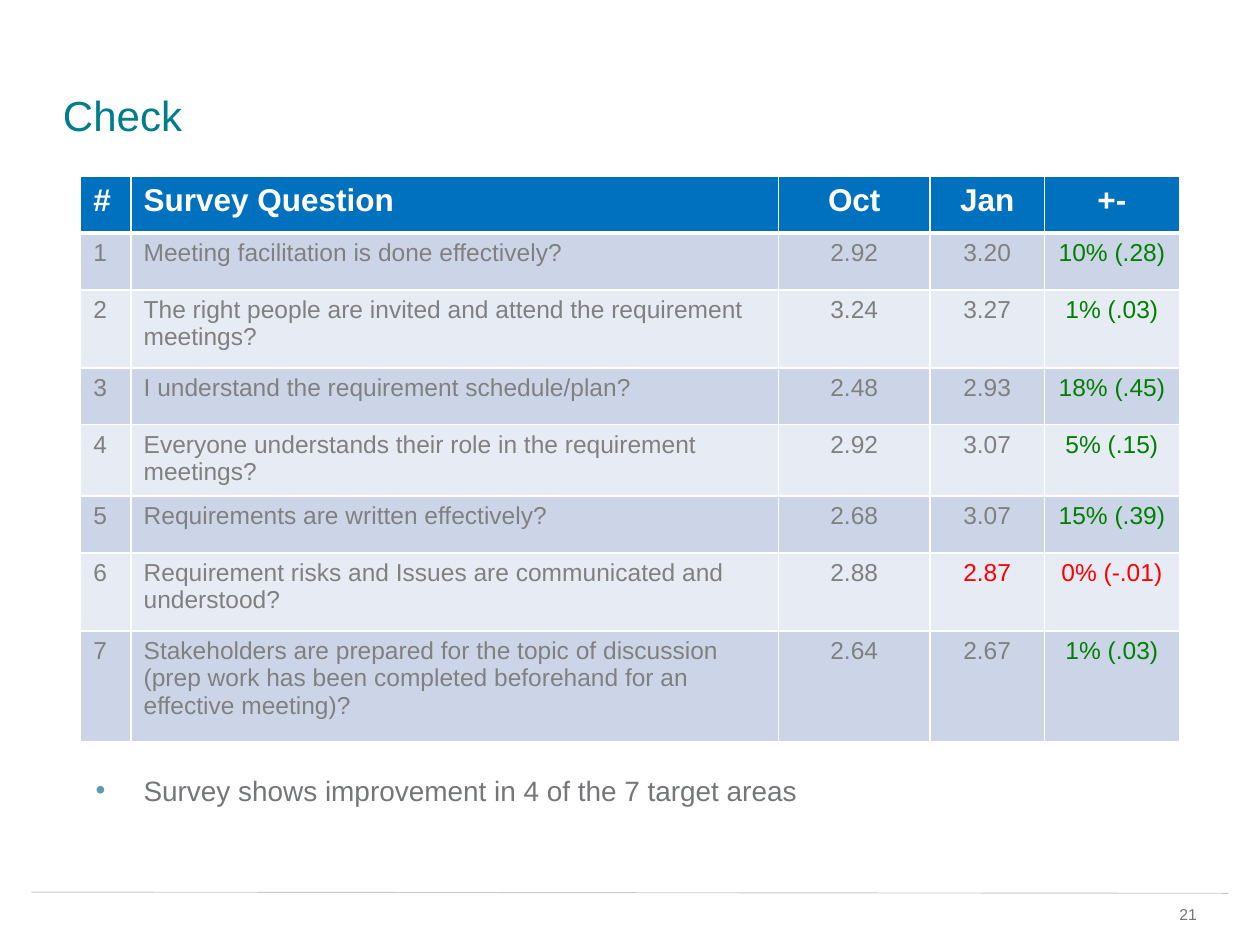
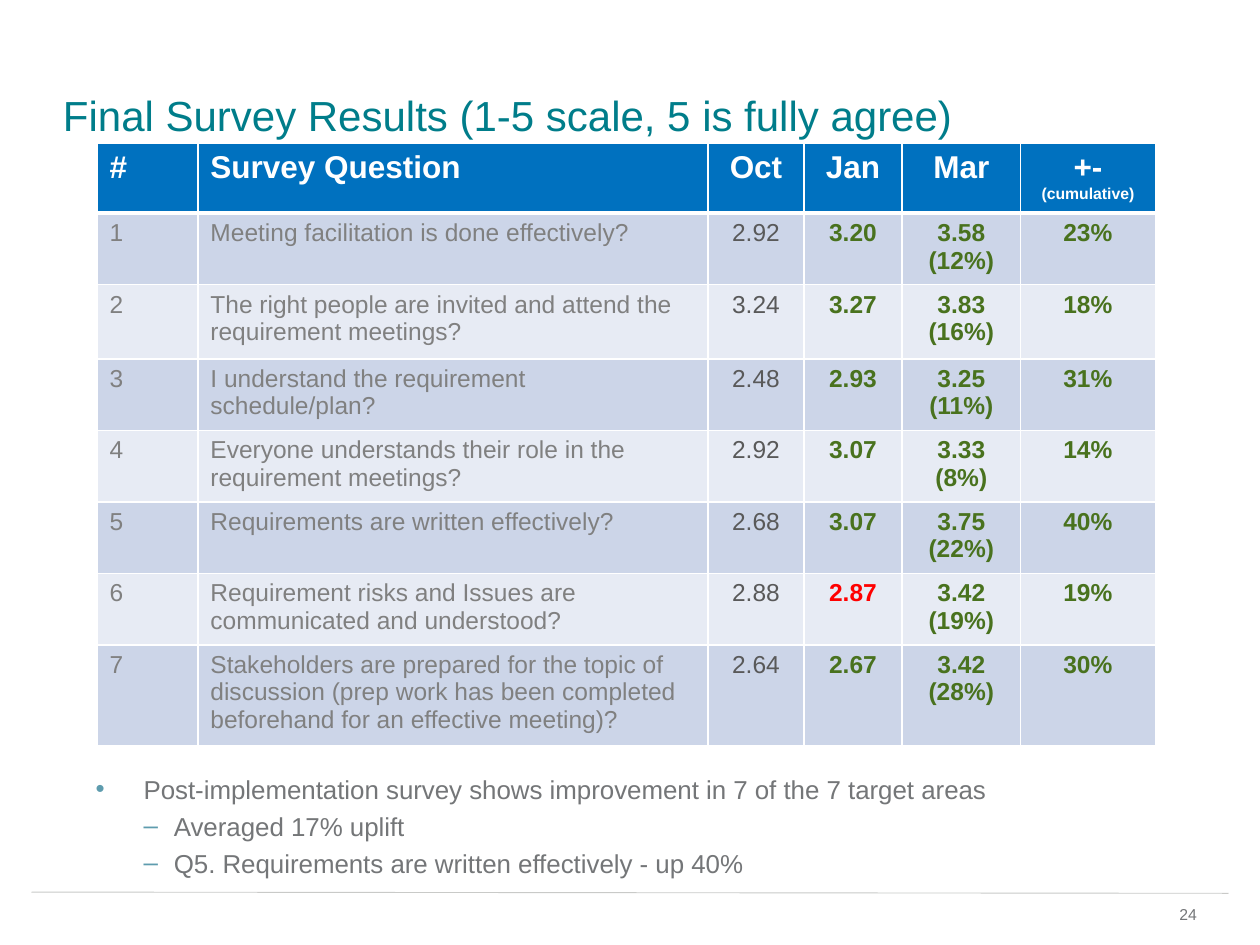
from dataclasses import dataclass

from lxml import etree
from pptx import Presentation
from pptx.dml.color import RGBColor
from pptx.enum.shapes import MSO_CONNECTOR
from pptx.enum.text import MSO_ANCHOR, PP_ALIGN
from pptx.oxml.ns import qn
from pptx.util import Inches, Pt

LEFT, MID, RIGHT = PP_ALIGN.LEFT, PP_ALIGN.CENTER, PP_ALIGN.RIGHT
TOP, BOTTOM = MSO_ANCHOR.TOP, MSO_ANCHOR.BOTTOM
STRAIGHT = MSO_CONNECTOR.STRAIGHT

# The slide is a grid of 100 columns by 75 rows
COLS, ROWS = 100, 75
UNIT = Inches(0.1)


@dataclass(frozen=True)
class Theme:
    font: str = "Arial"
    title: str = "007D8A"
    body: str = "747678"
    bullet: str = "5E9CAE"
    rule: str = "C9CAC8"
    white: str = "FFFFFF"
    head: str = "0071BF"
    bands: tuple = ("CCD5E8", "E7EBF4")
    grey: str = "808080"
    dark: str = "595959"
    green: str = "008000"
    olive: str = "49721E"
    red: str = "FF0000"
    big: float = 24
    label: float = 18
    cell: float = 14
    small: float = 9


T = Theme()

# Shared regions: left, top, width, height in grid units
TITLE = (5, 5, 91.7, 6.1)
RULE = (2.5, 70.8, 95, 0.1)
PAGE = (88.3, 71.3, 6.7, 2)
NOTES = (7.6, 60.9, 91.7, 9.1)

# Bullet levels: mark, left margin, hanging indent
LEVELS = (("•", 3.8, 3.8), ("–", 6.2, 2.4))

ASKS = (
    "Meeting facilitation is done effectively?",
    "The right people are invited and attend the requirement meetings?",
    "I understand the requirement schedule/plan?",
    "Everyone understands their role in the requirement meetings?",
    "Requirements are written effectively?",
    "Requirement risks and Issues are communicated and understood?",
    "Stakeholders are prepared for the topic of discussion (prep work has "
    "been completed beforehand for an effective meeting)?",
)
OCT = ("2.92", "3.24", "2.48", "2.92", "2.68", "2.88", "2.64")
JAN = ("3.20", "3.27", "2.93", "3.07", "3.07", "2.87", "2.67")
MAR = ("3.58\n(12%)", "3.83\n(16%)", "3.25\n(11%)", "3.33\n(8%)",
       "3.75\n(22%)", "3.42\n(19%)", "3.42\n(28%)")
GAIN = ("10% (.28)", "1% (.03)", "18% (.45)", "5% (.15)",
        "15% (.39)", "0% (-.01)", "1% (.03)")
TOTAL = ("23%", "18%", "31%", "14%", "40%", "19%", "30%")
DROPS = ("0% (-.01)", "2.87")  # values shown as a fall

CHECK = dict(
    title="Check", page="21", spot=(6.4, 14),
    cols=(4, 51.4, 12, 9.1, 10.7),
    rows=(4.5, 4.5, 6.2, 4.5, 5.4, 4.5, 6.2, 8.8),
    heads=("#", "Survey Question", "Oct", "Jan", "+-"),
    data=(OCT, JAN, GAIN),
    looks=((T.grey, False), (T.grey, False), (T.green, False)),
    size=16,
    notes=((0, "Survey shows improvement in 4 of the 7 target areas"),),
)
FINAL = dict(
    title="Final Survey Results (1-5 scale, 5 is fully agree)",
    page="24", spot=(7.7, 11.4),
    cols=(8, 40.5, 7.6, 7.8, 9.4, 10.7),
    rows=(5.2, 5.4, 5.9, 5.4, 5.4, 5.4, 5.4, 7.5),
    heads=("#", "Survey Question", "Oct", "Jan", "Mar", "+-\n(cumulative)"),
    data=(OCT, JAN, MAR, TOTAL),
    looks=((T.dark, False),) + ((T.olive, True),) * 3,
    size=14.8,
    notes=(
        (0, "Post-implementation survey shows improvement in 7 of the 7 "
            "target areas"),
        (1, "Averaged 17% uplift"),
        (1, "Q5. Requirements are written effectively - up 40%"),
    ),
)


def grid(*vals):
    return [round(v * UNIT) for v in vals]


def apply(obj, **vals):
    for name, val in vals.items():
        setattr(obj, name, val)


def write(para, text, size, color, bold=False, align=LEFT):
    para.alignment = align
    run = para.add_run()
    run.text = text
    apply(run.font, name=T.font, size=Pt(size), bold=bold)
    run.font.color.rgb = RGBColor.from_string(color)


def add_box(slide, box, pads, anchor=TOP):
    frame = slide.shapes.add_textbox(*grid(*box)).text_frame
    sides = ("margin_left", "margin_top", "margin_right", "margin_bottom")
    apply(frame, word_wrap=True, vertical_anchor=anchor,
          **dict(zip(sides, grid(*pads))))
    return frame


# Title, rule and page number
def add_base(slide, title, page):
    para = add_box(slide, TITLE, (0, 0.5, 1, 0), BOTTOM).paragraphs[0]
    para.line_spacing = Pt(26.8)
    write(para, title, T.big, T.title)

    x, y, w, h = RULE
    rule = slide.shapes.add_connector(STRAIGHT, *grid(x, y, x + w, y + h))
    rule.line.color.rgb = RGBColor.from_string(T.rule)
    rule.line.width = Pt(0.5)
    etree.SubElement(rule._element.spPr, qn("a:effectLst"))

    para = add_box(slide, PAGE, (1, 0.5, 0, 0.5)).paragraphs[0]
    write(para, page, T.small, T.body, align=RIGHT)


# Cell borders, then the fill that has to follow them
def paint(cell, fill, widths):
    props = cell._tc.get_or_add_tcPr()
    for side, width in zip("LRTB", widths):
        line = etree.SubElement(props, qn(f"a:ln{side}"), w=str(Pt(width)))
        solid = etree.SubElement(line, qn("a:solidFill"))
        etree.SubElement(solid, qn("a:srgbClr"), val=T.white)
    cell.fill.solid()
    cell.fill.fore_color.rgb = RGBColor.from_string(fill)


def fill_cell(cell, text, sizes, color, bold, align):
    frame = cell.text_frame
    for i, part in enumerate(text.split("\n")):
        para = frame.add_paragraph() if i else frame.paragraphs[0]
        write(para, part, sizes[i], color, bold, align)


# Survey table: header row, then one banded row per question
def add_survey(slide, spot, cols, rows, heads, data, looks):
    size = (sum(cols), sum(rows))
    table = slide.shapes.add_table(
        len(rows), len(cols), *grid(*spot, *size)).table
    for col, width in zip(table.columns, grid(*cols)):
        col.width = width
    for row, height in zip(table.rows, grid(*rows)):
        row.height = height

    nums = [str(n + 1) for n in range(len(ASKS))]
    lines = [heads, *zip(nums, ASKS, *data)]
    styles = ((T.grey, False),) * 2 + looks
    for r, line in enumerate(lines):
        fill = T.bands[(r - 1) % 2] if r else T.head
        edges = (1, 1, 3 if r == 1 else 1, 1 if r else 3)
        sizes = (T.cell, T.cell) if r else (T.label, T.small)
        for c, text in enumerate(line):
            color, bold = styles[c] if r else (T.white, True)
            if text in DROPS:
                color = T.red
            cell = table.cell(r, c)
            paint(cell, fill, edges)
            fill_cell(cell, text, sizes, color, bold, MID if c > 1 else LEFT)


# Bulleted findings under the table
def add_notes(slide, notes, size):
    frame = add_box(slide, NOTES, (0, 0.5, 1, 0.5))
    for i, (level, text) in enumerate(notes):
        para = frame.add_paragraph() if i else frame.paragraphs[0]
        apply(para, level=level, space_before=Pt(round(size * 0.23, 1)))
        write(para, text, size, T.body)
        mark, left, hang = LEVELS[level]
        props = para._p.get_or_add_pPr()
        for key, val in zip(("marL", "indent"), grid(left, -hang)):
            props.set(key, str(val))
        tint = etree.SubElement(props, qn("a:buClr"))
        etree.SubElement(tint, qn("a:srgbClr"), val=T.bullet)
        etree.SubElement(props, qn("a:buFont"), typeface=T.font)
        etree.SubElement(props, qn("a:buChar"), char=mark)


def add_page(deck, title, page, notes, size, **survey):
    slide = deck.slides.add_slide(deck.slide_layouts[6])
    add_base(slide, title, page)
    add_survey(slide, **survey)
    add_notes(slide, notes, size)


def main():
    deck = Presentation()
    deck.slide_width, deck.slide_height = grid(COLS, ROWS)
    for page in (CHECK, FINAL):
        add_page(deck, **page)
    deck.save("out.pptx")


if __name__ == "__main__":
    main()
